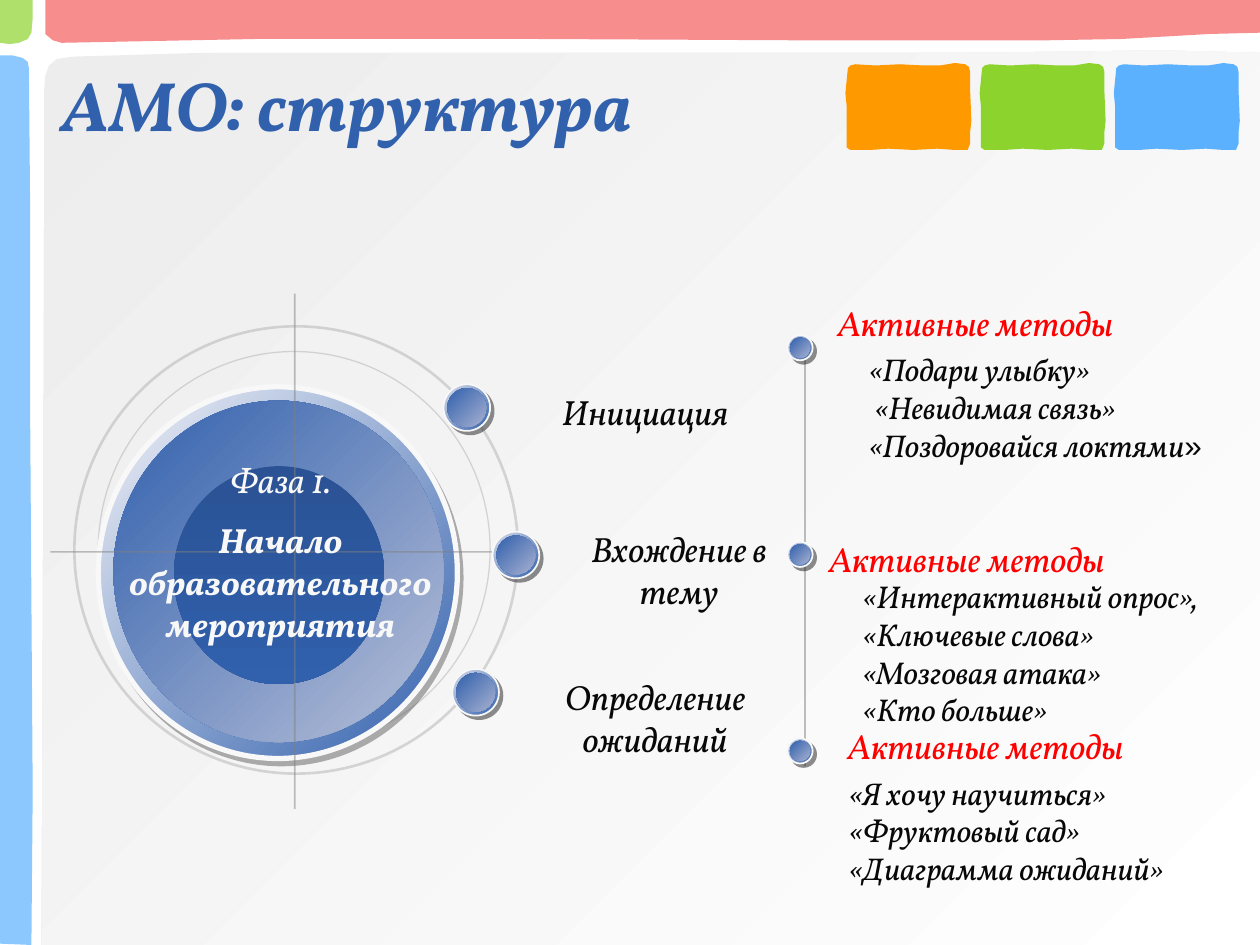
from lxml import etree
from pptx import Presentation
from pptx.dml.color import RGBColor
from pptx.enum import shapes, text
from pptx.oxml import ns
from pptx.util import Inches, Pt

BLUE = RGBColor(0x31, 0x60, 0xAD)
NAVY = RGBColor(0x2A, 0x52, 0x94)
ICE = RGBColor(0xF3, 0xF4, 0xF8)
STEEL = RGBColor(0xB8, 0xC0, 0xD8)
DOT_RIM = RGBColor(0xDD, 0xE0, 0xEB)
DOT_GLOW = RGBColor(0xA7, 0xB1, 0xD0)
SKY = RGBColor(0x5C, 0xB1, 0xFE)
GREEN = RGBColor(0x8C, 0xD3, 0x2D)
ORANGE = RGBColor(0xFF, 0x99, 0x00)
CORAL = RGBColor(0xF4, 0x5E, 0x5E)
RED = RGBColor(0xFF, 0x00, 0x00)
INK = RGBColor(0x08, 0x08, 0x08)
OFF_WHITE = RGBColor(0xF8, 0xF8, 0xF8)
WHITE = RGBColor(0xFF, 0xFF, 0xFF)
PALE = RGBColor(0xE6, 0xE6, 0xE6)
RING_GRAY = RGBColor(0xB2, 0xB2, 0xB2)
AXIS_GRAY = RGBColor(0x80, 0x80, 0x80)
SHADE = RGBColor(0x5F, 0x5F, 0x5F)
DOT_SHADE = RGBColor(0x1C, 0x1C, 0x1C)

prs = Presentation()
prs.slide_width, prs.slide_height = Inches(10), Inches(7.5)
slide = prs.slides.add_slide(prs.slide_layouts[5])
title = slide.shapes.title
translucent = []  # (element holding the colours, opacity in percent)


def write_text(lines, box, size=20, color=INK, bold=False, align=None):
    """Fill a (left, top, width, height) text box with one paragraph per line."""
    frame = slide.shapes.add_textbox(*map(Inches, box)).text_frame
    frame.word_wrap = True
    frame.auto_size = text.MSO_AUTO_SIZE.SHAPE_TO_FIT_TEXT
    for number, line in enumerate(lines):
        paragraph = frame.add_paragraph() if number else frame.paragraphs[0]
        paragraph.alignment = align
        run = paragraph.add_run()
        run.text = line
        run.font.name, run.font.size = "Vollkorn", Pt(size)
        run.font.italic, run.font.bold = True, bold
        run.font.color.rgb = color
    return frame


def add_disc(box, stops=None, angle=45, line=None, width=1, shadow=None):
    """Draw an ellipse; stops are two gradient colours, shadow is (colour, points, degrees)."""
    disc = slide.shapes.add_shape(shapes.MSO_SHAPE.OVAL, *map(Inches, box))
    disc.shadow.inherit = False
    if stops:
        disc.fill.gradient()
        disc.fill.gradient_angle = 360 - angle
        for stop, color in zip(disc.fill.gradient_stops, stops):
            stop.color.rgb = color
    else:
        disc.fill.background()
    if line:
        disc.line.color.rgb, disc.line.width = line, Pt(width)
    else:
        disc.line.fill.background()
    if shadow:
        color, distance, direction = shadow
        effects = disc.element.spPr.find(ns.qn("a:effectLst"))
        outer = etree.SubElement(effects, ns.qn("a:outerShdw"), blurRad="0", dist=str(Pt(distance)),
                                 dir=str(direction * 60000), algn="ctr", rotWithShape="0")
        etree.SubElement(outer, ns.qn("a:srgbClr"), val=str(color))
        translucent.append((outer, 50))
    return disc


# Frame: panel, side bars and three tiles
panel = [(10, 7.5), (10, 0.42), (9.2, 0.4), (8.5, 0.41), (7.6, 0.42), (4.33, 0.42), (1.6, 0.42),
         (0.57, 0.45), (0.45, 0.47), (0.39, 0.52), (0.36, 0.6), (0.35, 0.73), (0.35, 1.82),
         (0.34, 5.06), (0.33, 7.5)]
top_bar = [(10, 0), (10, 0.26), (9.6, 0.27), (8.9, 0.31), (8.32, 0.32), (6.3, 0.32), (4.26, 0.31),
           (2.03, 0.31), (0.49, 0.34), (0.42, 0.32), (0.36, 0.27), (0.36, 0)]
left_bar = [(0, 7.49), (0.25, 7.5), (0.26, 6.28), (0.24, 3.3), (0.24, 1.67), (0.23, 0.54),
            (0.22, 0.49), (0.18, 0.46), (0.1, 0.44), (0, 0.44)]
corner = [(0, 0), (0.26, 0), (0.26, 0.14), (0.25, 0.26), (0.22, 0.31), (0.15, 0.34),
          (0.08, 0.35), (0, 0.34)]
tile = [(0.02, 0.54), (0.04, 0.52), (0.08, 0.51), (0.24, 0.52), (0.43, 0.51), (0.62, 0.52),
        (0.75, 0.52), (0.87, 0.5), (0.95, 0.51), (0.98, 0.53), (0.99, 0.57), (0.99, 0.71),
        (1, 0.96), (0.99, 1.05), (0.99, 1.14), (0.97, 1.19), (0.87, 1.19), (0.73, 1.18),
        (0.54, 1.19), (0.34, 1.18), (0.2, 1.19), (0.04, 1.19), (0.01, 1.17), (0.01, 1.13),
        (0.01, 0.84), (0, 0.74), (0.01, 0.64)]
outlines = [(panel, None, 70), (top_bar, CORAL, 70), (left_bar, SKY, 70), (corner, GREEN, 70)]
for number, color in enumerate((ORANGE, GREEN, SKY)):
    left = 6.71 + 1.065 * number
    outlines.append(([(left + x, y) for x, y in tile], color, 100))

for points, color, opacity in outlines:
    corners = [(Inches(x), Inches(y)) for x, y in points]
    builder = slide.shapes.build_freeform(*corners[0])
    builder.add_line_segments(corners[1:], close=True)
    piece = builder.convert_to_shape()
    piece.shadow.inherit = False
    piece.line.fill.background()
    if color:
        piece.fill.solid()
        piece.fill.fore_color.rgb = color
    else:
        piece.fill.gradient()
        piece.fill.gradient_angle = 315
        for stop, shade in zip(piece.fill.gradient_stops, (PALE, WHITE)):
            stop.color.rgb = shade
    translucent.append((piece.element.spPr, opacity))

# Title, in front of the frame
piece.element.addnext(title.element)
title.left, title.top, title.width, title.height = map(Inches, (0.39, 0.31, 6.36, 1.03))
title.text = "АМО: структура"
title.text_frame.auto_size = text.MSO_AUTO_SIZE.NONE
title.text_frame.vertical_anchor = text.MSO_ANCHOR.MIDDLE
heading = title.text_frame.paragraphs[0]
heading.alignment = text.PP_ALIGN.LEFT
heading.font.name, heading.font.size = "Vollkorn", Pt(40)
heading.font.bold = heading.font.italic = True
heading.font.color.rgb = BLUE

# Phase emblem: rings, discs and cross hairs
inner_ring = add_disc((0.78, 2.79, 3.11, 3.14), line=RING_GRAY, width=0.75)
add_disc((0.78, 3.07, 2.85, 2.95), (ICE, BLUE), line=OFF_WHITE, width=3, shadow=(SHADE, 3.6, 56))
add_disc((0.9, 3.18, 2.62, 2.71), (BLUE, STEEL))
add_disc((1.38, 3.7, 1.67, 1.73), (NAVY, BLUE), angle=90)
outer_ring = add_disc((0.59, 2.59, 3.52, 3.55), line=RING_GRAY, width=1.5)
for ring in (inner_ring, outer_ring):
    translucent.append((ring.element.spPr, 50))

for ends in ((0.4, 4.38, 4.28, 4.38), (2.34, 2.33, 2.34, 6.42), (6.39, 2.68, 6.39, 6.08)):
    axis = slide.shapes.add_connector(shapes.MSO_CONNECTOR.STRAIGHT, *map(Inches, ends))
    axis.line.color.rgb, axis.line.width = AXIS_GRAY, Pt(1)
    etree.SubElement(axis.element.spPr, ns.qn("a:effectLst"))
    translucent.append((axis.element.spPr, 50))

phase = write_text(["Фаза 1.", "Начало образовательного мероприятия"], (0.78, 3.59, 2.89, 1.62),
                   color=OFF_WHITE, align=text.PP_ALIGN.CENTER)
phase.paragraphs[1].space_before = Pt(10)
phase.paragraphs[1].runs[0].font.bold = True
for paragraph in phase.paragraphs:
    fill = paragraph.runs[0].font.fill
    effects = etree.Element(ns.qn("a:effectLst"))
    outer = etree.SubElement(effects, ns.qn("a:outerShdw"), dist=str(Pt(2)), dir="2700000", algn="tl")
    etree.SubElement(outer, ns.qn("a:srgbClr"), val="000000")
    paragraph.runs[0].font.color.rgb = OFF_WHITE
    paragraph.runs[0]._r.rPr.find(ns.qn("a:solidFill")).addnext(effects)

# Stages
for stage, box in (("Инициация", (3.98, 3.05, 2.28, 0.44)),
                   ("Вхождение в тему", (4.42, 4.14, 1.94, 0.77)),
                   ("Определение ожиданий", (4.06, 5.31, 2.28, 0.77))):
    write_text([stage], box, align=text.PP_ALIGN.CENTER)

# Methods for each stage
for left, top in ((6.55, 2.34), (6.48, 4.22), (6.63, 5.7)):
    write_text(["Активные методы"], (left, top, 2.67, 0.44), color=RED)
greetings = write_text(["«Подари улыбку»", " «Невидимая связь»", "«Поздоровайся локтями"],
                       (6.8, 2.73, 2.89, 1.31), size=18)
closing = greetings.paragraphs[2].add_run()
closing.text = "»"
closing.font.name, closing.font.size = "Arial", Pt(18)
closing.font.color.rgb = INK
write_text(["«Интерактивный опрос»,", "«Ключевые слова»", "«Мозговая атака»", "«Кто больше»"],
           (6.75, 4.53, 3.25, 1.31), size=18)
write_text(["«Я хочу научиться»", "«Фруктовый сад»", "«Диаграмма ожиданий»"],
           (6.64, 6.09, 3.2, 1.01), size=18)

# Marker dots: rim and face
for left, top, size, rim in ((3.52, 3.05, 0.37, 0.03), (3.91, 4.22, 0.37, 0.03),
                             (3.59, 5.31, 0.37, 0.03), (6.25, 2.66, 0.2, 0.02),
                             (6.25, 4.3, 0.2, 0.02), (6.25, 5.86, 0.2, 0.02)):
    add_disc((left, top, size, size), (DOT_RIM, BLUE), line=OFF_WHITE, shadow=(DOT_SHADE, 2.8, 45))
    face = size - 2 * rim
    add_disc((left + rim, top + rim, face, face), (BLUE, DOT_GLOW))

for holder, opacity in translucent:
    for color in holder.iter(ns.qn("a:srgbClr")):
        etree.SubElement(color, ns.qn("a:alpha"), val=str(opacity * 1000))

prs.save("out.pptx")
